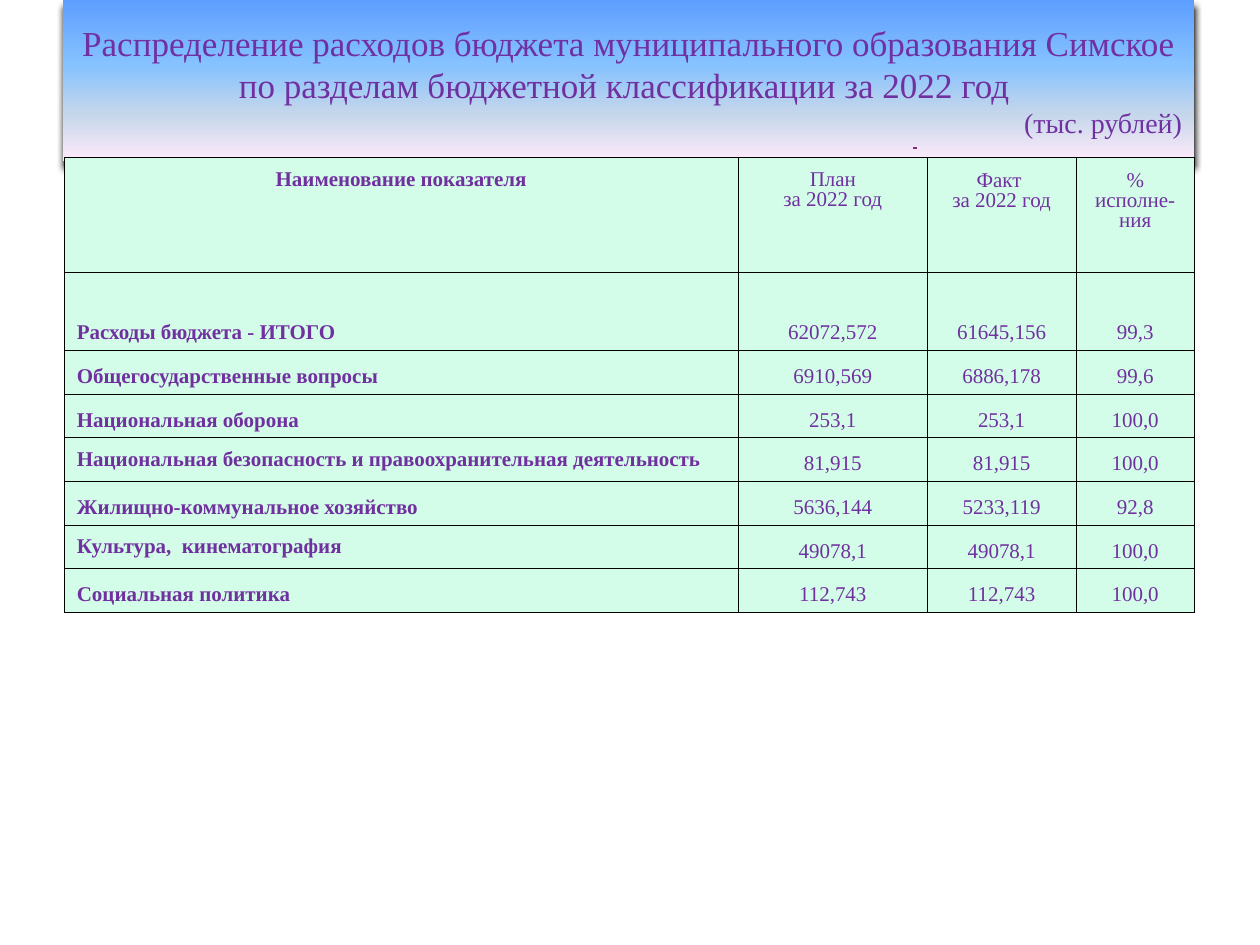
from lxml import etree
from pptx import Presentation
from pptx.dml.color import RGBColor
from pptx.enum.shapes import MSO_CONNECTOR, MSO_SHAPE
from pptx.enum.text import MSO_ANCHOR as ANCHOR, PP_ALIGN as ALIGN
from pptx.oxml.ns import qn
from pptx.util import Inches, Pt

COLORS = {"text": "7030A0", "cell": "D3FDE8", "border": "000000",
          "shadow": "000000", "mark": "83297F"}
BANNER_STOPS = [(0, "5E9EFF"), (40, "85C2FF"), (70, "C4D6EB"), (100, "FFEBFA")]
FONT = "Times New Roman"


def write(paragraph, text, size, align, bold=False):
    paragraph.alignment = align
    run = paragraph.add_run()
    run.text = text
    run.font.name = FONT
    run.font.size = Pt(size)
    run.font.bold = bold
    run.font.color.rgb = RGBColor.from_string(COLORS["text"])


def add_xml(parent, tag, **attributes):
    child = etree.SubElement(parent, qn(tag))
    for name, value in attributes.items():
        child.set(name, str(value))
    return child


prs = Presentation()
prs.slide_width, prs.slide_height = Inches(10), Inches(7.5)
slide = prs.slides.add_slide(prs.slide_layouts[6])

# Title banner with a four-stop gradient and a shadow
banner = slide.shapes.add_shape(MSO_SHAPE.RECTANGLE, Inches(0.5), 0,
                                Inches(8.98), Inches(1.28))
banner.line.fill.background()
banner.fill.gradient()
banner.fill.gradient_angle = 270
stops = banner._element.spPr.find(".//" + qn("a:gsLst"))
for stop in list(stops):
    stops.remove(stop)
for percent, color in BANNER_STOPS:
    add_xml(add_xml(stops, "a:gs", pos=percent * 1000), "a:srgbClr", val=color)

banner.shadow.inherit = False
effects = banner._element.spPr.find(qn("a:effectLst"))
shadow = add_xml(effects, "a:outerShdw", blurRad=Pt(4), dist=Pt(4),
                 dir=90 * 60000, rotWithShape=0)
add_xml(shadow, "a:srgbClr", val=COLORS["shadow"])

title = banner.text_frame
title.word_wrap = True
title.vertical_anchor = ANCHOR.MIDDLE
write(title.paragraphs[0],
      "Распределение расходов бюджета муниципального образования Симское "
      "по разделам бюджетной классификации за 2022 год ", 20, ALIGN.CENTER)
write(title.add_paragraph(), "(тыс. рублей)", 16, ALIGN.RIGHT)

# Budget table: name, plan, actual, percent
budget = [
    ("Наименование показателя", "План\nза 2022 год", "Факт \nза 2022 год",
     "% исполне-ния"),
    ("Расходы бюджета - ИТОГО", "62072,572", "61645,156", "99,3"),
    ("Общегосударственные вопросы", "6910,569", "6886,178", "99,6"),
    ("Национальная оборона", "253,1", "253,1", "100,0"),
    ("Национальная безопасность и правоохранительная деятельность",
     "81,915", "81,915", "100,0"),
    ("Жилищно-коммунальное хозяйство", "5636,144", "5233,119", "92,8"),
    ("Культура,  кинематография", "49078,1", "49078,1", "100,0"),
    ("Социальная политика", "112,743", "112,743", "100,0"),
]
TOP_NAMES = (4, 6)  # rows whose name sits at the top of the cell
column_widths = [5.35, 1.5, 1.18, 0.94]
table_height, header_height, total_height = 3.61, 0.91, 0.62
section_height = (table_height - header_height - total_height) / (len(budget) - 2)
row_heights = [header_height, total_height] + [section_height] * (len(budget) - 2)

table = slide.shapes.add_table(len(budget), len(column_widths), Inches(0.51),
                               Inches(1.25), Inches(8.98),
                               Inches(table_height)).table
table.first_row = table.horz_banding = False
for column, width in zip(table.columns, column_widths):
    column.width = Inches(width)

for r, entries in enumerate(budget):
    table.rows[r].height = Inches(row_heights[r])
    for c, entry in enumerate(entries):
        cell = table.cell(r, c)
        cell.margin_left = cell.margin_right = Inches(0.1)
        cell.margin_top = Inches(0.11 if r == 0 and c > 1 else 0.1)
        cell.margin_bottom = Inches(0.05)
        at_top = r == 0 or (c == 0 and r in TOP_NAMES)
        cell.vertical_anchor = ANCHOR.TOP if at_top else ANCHOR.BOTTOM

        # Borders come before the fill in the cell properties
        properties = cell._tc.get_or_add_tcPr()
        for side in ("a:lnL", "a:lnR", "a:lnT", "a:lnB"):
            border = add_xml(properties, side, w=Pt(0.11))
            add_xml(add_xml(border, "a:solidFill"), "a:srgbClr",
                    val=COLORS["border"])
        cell.fill.solid()
        cell.fill.fore_color.rgb = RGBColor.from_string(COLORS["cell"])

        for i, line in enumerate(entry.split("\n")):
            frame = cell.text_frame
            paragraph = frame.add_paragraph() if i else frame.paragraphs[0]
            paragraph.line_spacing = 0.86
            align = ALIGN.LEFT if c == 0 and r > 0 else ALIGN.CENTER
            write(paragraph, line, 12, align, bold=c == 0)

# Small mark under the title
mark = slide.shapes.add_connector(MSO_CONNECTOR.STRAIGHT, Inches(7.26),
                                  Inches(1.17), Inches(7.26), Inches(1.18))
mark.line.color.rgb = RGBColor.from_string(COLORS["mark"])
mark.line.width = Pt(2)
add_xml(mark._element.spPr, "a:effectLst")

prs.save("out.pptx")
